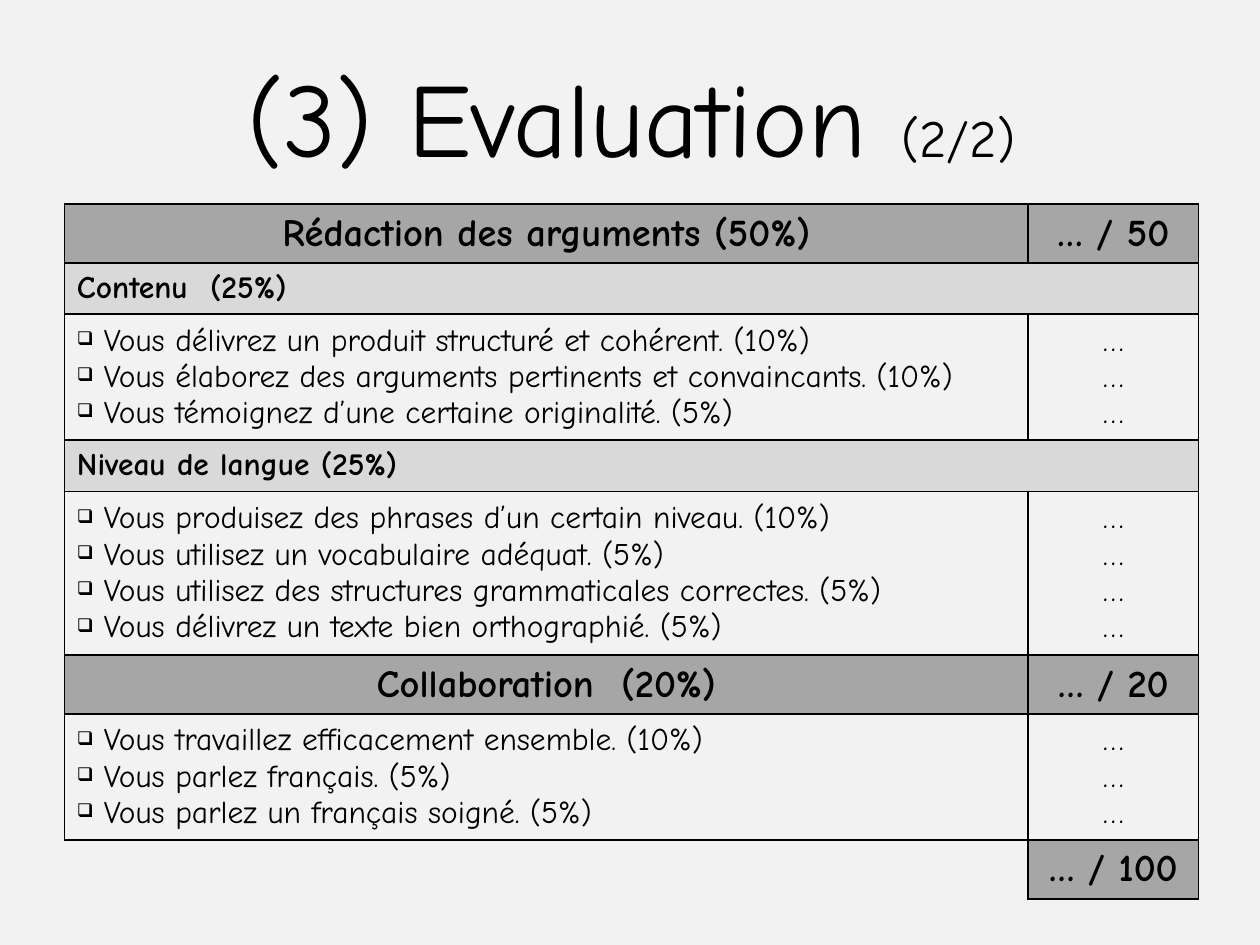
from lxml.etree import SubElement
from pptx import Presentation
from pptx.dml.color import RGBColor
from pptx.enum.text import MSO_ANCHOR, PP_ALIGN
from pptx.oxml.ns import qn
from pptx.util import Pt

COLORS = {"paper": "F2F2F2", "ink": "000000", "section": "A6A6A6", "criterion": "D9D9D9"}
DOTS = "…"
SIDES = "LRTB"
ROW_HEIGHT = 29.2
BULLET_INDENT = 15.4

EVALUATION = [
    ("section", "Rédaction des arguments (50%)", "… / 50"),
    ("criterion", "Contenu  (25%)"),
    ("checklist",
     "Vous délivrez un produit structuré et cohérent. (10%)",
     "Vous élaborez des arguments pertinents et convaincants. (10%)",
     "Vous témoignez d’une certaine originalité. (5%)"),
    ("criterion", "Niveau de langue (25%)"),
    ("checklist",
     "Vous produisez des phrases d’un certain niveau. (10%)",
     "Vous utilisez un vocabulaire adéquat. (5%)",
     "Vous utilisez des structures grammaticales correctes. (5%)",
     "Vous délivrez un texte bien orthographié. (5%)"),
    ("section", "Collaboration  (20%)", "… / 20"),
    ("checklist",
     "Vous travaillez efficacement ensemble. (10%)",
     "Vous parlez français. (5%)",
     "Vous parlez un français soigné. (5%)"),
    ("total", "", "… / 100"),
]


def add_run(paragraph, text, *, font, size, color, bold=False):
    run = paragraph.add_run()
    run.text = text
    run.font.name = font
    run.font.size = Pt(size)
    run.font.bold = bold
    run.font.color.rgb = RGBColor.from_string(color)


def add_bullet(paragraph):
    properties = paragraph._p.get_or_add_pPr()
    properties.set("marL", str(Pt(BULLET_INDENT)))
    properties.set("indent", str(-Pt(BULLET_INDENT)))
    SubElement(properties, qn("a:buSzPct"), val="60000")
    SubElement(properties, qn("a:buChar"), char="❑")


def draw_borders(cell, visible):
    properties = cell._tc.get_or_add_tcPr()
    for side in SIDES:
        line = SubElement(properties, qn(f"a:ln{side}"), w=str(Pt(1)))
        if side in visible:
            fill = SubElement(line, qn("a:solidFill"))
            SubElement(fill, qn("a:srgbClr"), val=COLORS["ink"])
        else:
            SubElement(line, qn("a:noFill"))


class EvaluationSlide:
    """Hold the slide and its style, and draw the title and the scoring grid."""

    def __init__(self, slide, font):
        self.slide = slide
        self.font = font
        background = slide.background.fill
        background.solid()
        background.fore_color.rgb = RGBColor.from_string(COLORS["paper"])

    def label(self, paragraph, text, size, bold=False):
        add_run(paragraph, text, font=self.font, size=size, bold=bold, color=COLORS["ink"])

    def title(self, parts, left, top, width, height):
        frame = self.slide.shapes.add_textbox(Pt(left), Pt(top), Pt(width), Pt(height)).text_frame
        frame.word_wrap = True
        frame.vertical_anchor = MSO_ANCHOR.MIDDLE
        heading = frame.paragraphs[0]
        heading.alignment = PP_ALIGN.CENTER
        for text, size in parts:
            self.label(heading, text, size)

    def cell(self, cell, lines, size=18, bold=False, centered=False, bulleted=False,
             fill=None, borders=SIDES):
        cell.vertical_anchor = MSO_ANCHOR.MIDDLE
        draw_borders(cell, borders)
        if fill:
            cell.fill.solid()
            cell.fill.fore_color.rgb = RGBColor.from_string(COLORS[fill])
        else:
            cell.fill.background()
        frame = cell.text_frame
        for index, line in enumerate(lines):
            paragraph = frame.add_paragraph() if index else frame.paragraphs[0]
            paragraph.alignment = PP_ALIGN.CENTER if centered else PP_ALIGN.LEFT
            if bulleted:
                add_bullet(paragraph)
            self.label(paragraph, line, size, bold)

    def grid(self, rows, left, top, widths):
        table = self.slide.shapes.add_table(
            len(rows), len(widths), Pt(left), Pt(top),
            Pt(sum(widths)), Pt(ROW_HEIGHT * len(rows))).table
        table.first_row = table.horz_banding = False
        for column, width in zip(table.columns, widths):
            column.width = Pt(width)
        heading = {"size": 22, "bold": True, "centered": True, "fill": "section"}
        for index, (kind, *texts) in enumerate(rows):
            table.rows[index].height = Pt(ROW_HEIGHT)
            wording, score = table.cell(index, 0), table.cell(index, 1)
            if kind == "section":
                self.cell(wording, texts[:1], **heading)
                self.cell(score, texts[1:], **heading)
            elif kind == "criterion":
                wording.merge(score)
                self.cell(wording, texts, bold=True, fill="criterion")
                self.cell(score, [], fill="criterion")
            elif kind == "checklist":
                self.cell(wording, texts, bulleted=True)
                self.cell(score, [DOTS] * len(texts), centered=True)
            else:
                self.cell(wording, [], borders="TR")
                self.cell(score, texts[1:], **heading)


def main():
    presentation = Presentation()
    presentation.slide_width, presentation.slide_height = Pt(720), Pt(540)
    slide = presentation.slides.add_slide(presentation.slide_layouts[6])
    evaluation = EvaluationSlide(slide, "Comic Neue")
    evaluation.title([("(3) Evaluation ", 60), ("(2/2)", 30)], 36.8, 21, 648, 90)
    evaluation.grid(EVALUATION, 36.8, 116.7, [550.8, 97.2])
    presentation.save("out.pptx")


if __name__ == "__main__":
    main()
